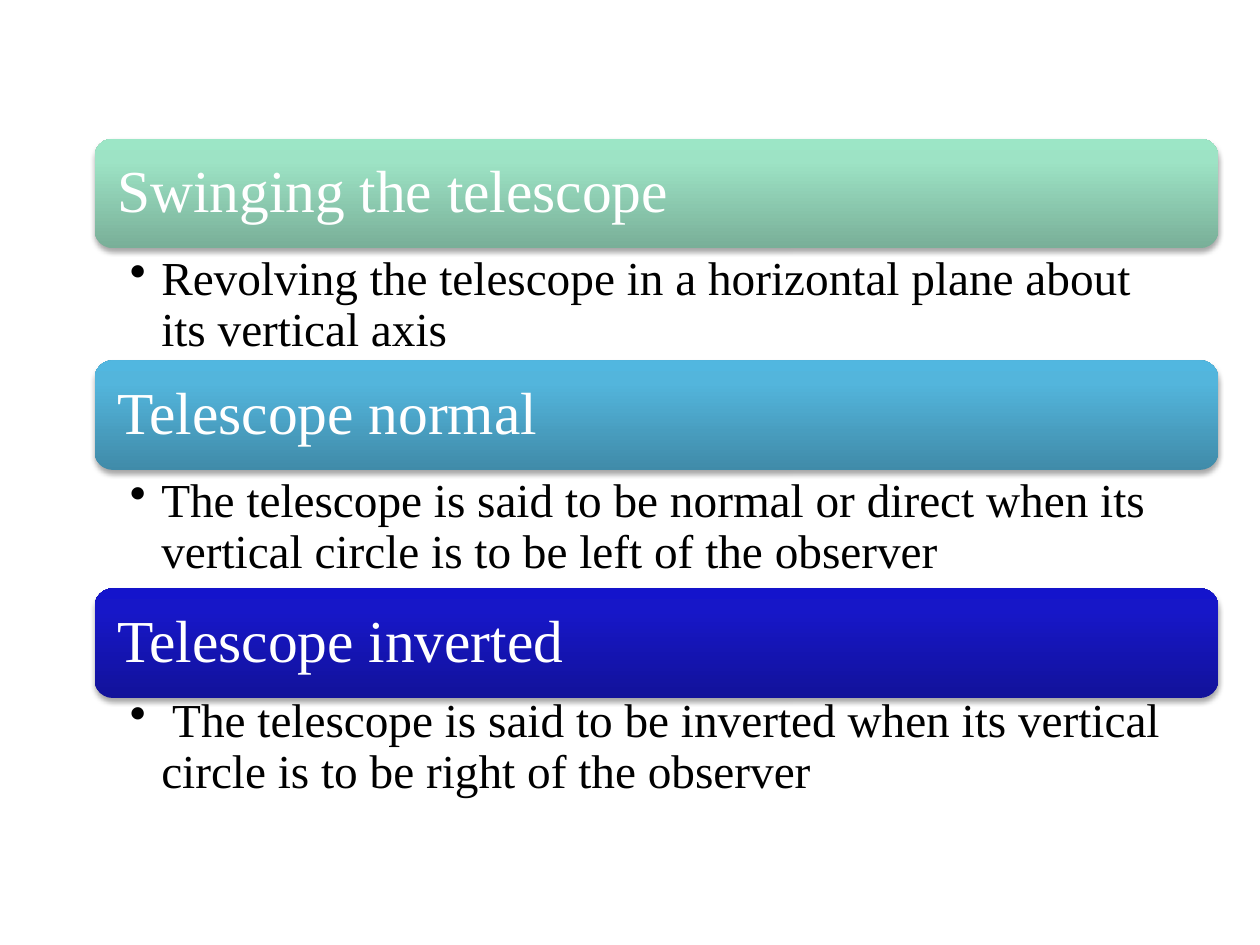
"""Build a slide defining three telescope terms."""
from dataclasses import dataclass

from lxml import etree
from pptx import Presentation
from pptx import util as u
from pptx.dml.color import RGBColor
from pptx.enum import shapes, text
from pptx.oxml import parse_xml
from pptx.oxml.ns import nsdecls, qn


@dataclass(frozen=True)
class Theme:
    """Colours, font and type sizes of the slide."""
    font: str = "Times New Roman"
    heading_size: int = 34
    body_size: int = 27
    heading_color: str = "FFFFFF"
    body_color: str = "000000"
    shadow: str = "000000"
    green: tuple = ("79AF98", "9DE3C5", "9CE6C6")
    sky: tuple = ("408BA9", "53B5DC", "51B7E0")
    navy: tuple = ("12129A", "1717C8", "1414CC")


class Deck:
    """Hold the theme and the current slide."""

    def __init__(self, prs, theme):
        """Add a blank slide to draw on."""
        self.theme = theme
        self.s = prs.slides.add_slide(prs.slide_layouts[6])

    def add_words(self, sp, words, size, color, frame):
        """Fill a shape with one styled paragraph."""
        tf = sp.text_frame
        for name, value in frame.items():
            setattr(tf, name, value)
        p = tf.paragraphs[0]
        r = p.add_run()
        r.text = words
        for name, value in {"alignment": text.PP_ALIGN.LEFT, "line_spacing": 0.9}.items():
            setattr(p, name, value)
        for name, value in {"name": self.theme.font, "size": u.Pt(size)}.items():
            setattr(r.font, name, value)
        r.font.color.rgb = RGBColor.from_string(color)
        return p

    def heading(self, words, colors, box):
        """Add a rounded gradient bar with a heading."""
        sp = self.s.shapes.add_shape(shapes.MSO_SHAPE.ROUNDED_RECTANGLE, *map(u.Inches, box))
        sp.line.fill.background()
        stops = "".join(f'<a:gs pos="{pos}"><a:srgbClr val="{color}"/></a:gs>'
                        for pos, color in zip((0, 80000, 100000), colors))
        sp._element.spPr.find(qn("a:prstGeom")).addnext(parse_xml(
            f'<a:gradFill {nsdecls("a")} rotWithShape="1"><a:gsLst>{stops}</a:gsLst>'
            '<a:lin ang="16200000" scaled="0"/></a:gradFill>'))
        sp._element.spPr.append(parse_xml(
            f'<a:effectLst {nsdecls("a")}><a:outerShdw blurRad="{u.Pt(3.1)}" '
            f'dist="{u.Pt(1.8)}" dir="5400000" rotWithShape="0">'
            f'<a:srgbClr val="{self.theme.shadow}"><a:alpha val="35000"/></a:srgbClr>'
            '</a:outerShdw></a:effectLst>'))
        inset = u.Inches(0.14)
        self.add_words(sp, words, self.theme.heading_size, self.theme.heading_color, {
            "word_wrap": True, "vertical_anchor": text.MSO_ANCHOR.MIDDLE,
            "margin_left": inset, "margin_right": inset,
            "margin_top": inset, "margin_bottom": inset})

    def bullet(self, words, box):
        """Add a bulleted definition."""
        sp = self.s.shapes.add_textbox(*map(u.Inches, box))
        p = self.add_words(sp, words, self.theme.body_size, self.theme.body_color, {
            "word_wrap": True, "vertical_anchor": text.MSO_ANCHOR.TOP,
            "margin_left": u.Inches(0.28), "margin_right": u.Inches(0.26),
            "margin_top": u.Inches(0.05), "margin_bottom": u.Inches(0.05)})
        pPr = p._p.get_or_add_pPr()
        indent = u.Inches(0.25)
        for name, value in {"marL": indent, "indent": -indent}.items():
            pPr.set(name, str(value))
        etree.SubElement(pPr, qn("a:buChar")).set("char", "•")


def main():
    """Build and save the slide."""
    prs = Presentation()
    prs.slide_width, prs.slide_height = u.Inches(10), u.Inches(7.5)
    theme = Theme()
    deck = Deck(prs, theme)
    left, width, bar_height, body_height = 0.75, 8.92, 0.87, 0.89
    terms = [
        ("Swinging the telescope", theme.green, 1.1, 1.97,
         "Revolving the telescope in a horizontal plane about its vertical axis"),
        ("Telescope normal", theme.sky, 2.86, 3.73,
         "The telescope is said to be normal or direct when its vertical circle "
         "is to be left of the observer"),
        ("Telescope inverted", theme.navy, 4.67, 5.48,
         " The telescope is said to be inverted when its vertical circle "
         "is to be right of the observer"),
    ]
    for term, colors, bar_top, body_top, definition in terms:
        deck.heading(term, colors, (left, bar_top, width, bar_height))
        deck.bullet(definition, (left, body_top, width, body_height))
    prs.save("out.pptx")


if __name__ == "__main__":
    main()
